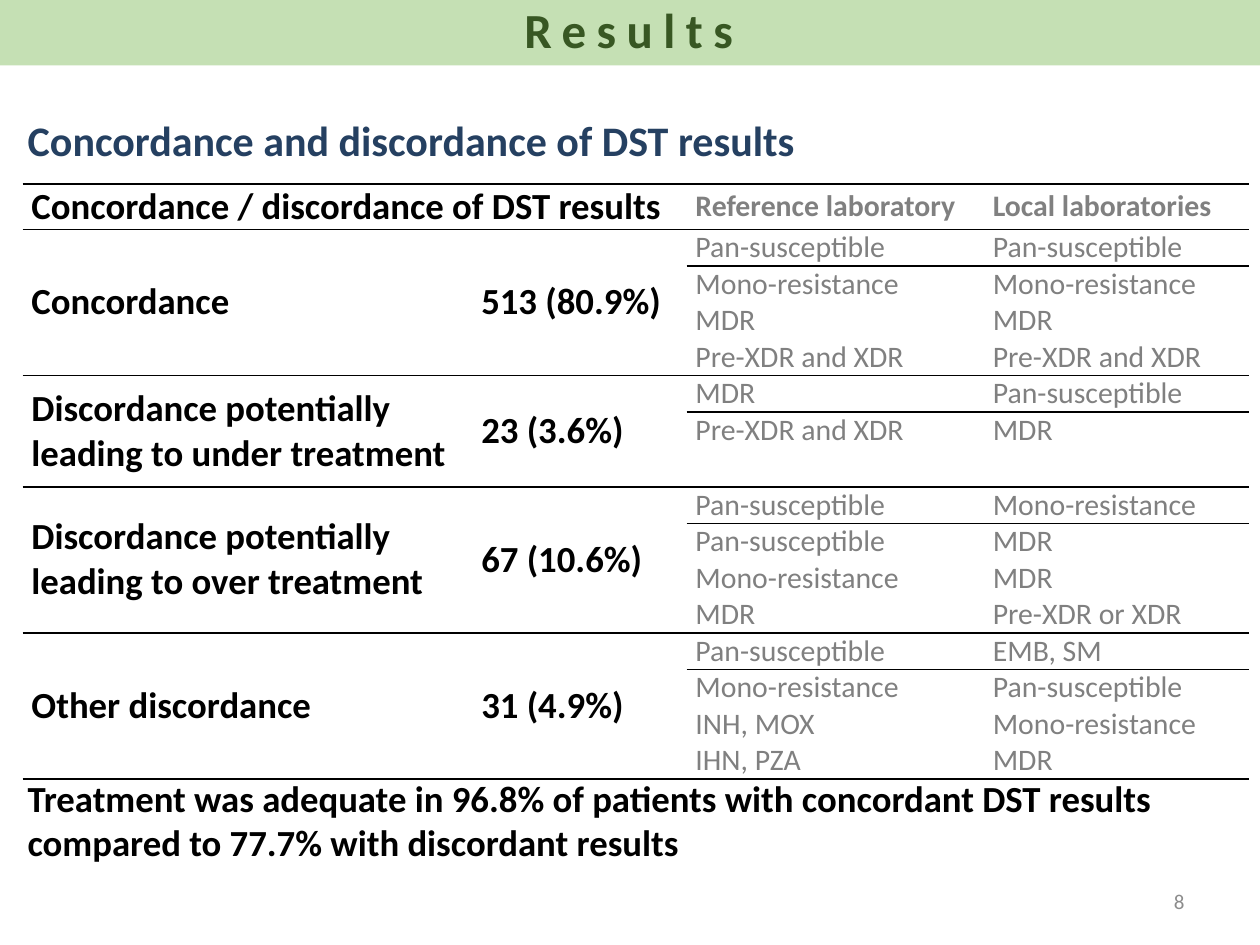
from lxml.etree import SubElement
from pptx import Presentation
from pptx.dml.color import RGBColor
from pptx.enum.shapes import MSO_SHAPE
from pptx.enum.text import MSO_ANCHOR, PP_ALIGN
from pptx.oxml.ns import qn
from pptx.util import Inches, Pt

BLACK = RGBColor(0x00, 0x00, 0x00)
GRAY = RGBColor(0x80, 0x80, 0x80)
NUMBER_GRAY = RGBColor(0x8C, 0x8C, 0x8C)
NAVY = RGBColor(0x25, 0x40, 0x61)
LIGHT_GREEN = RGBColor(0xC5, 0xE0, 0xB4)
DARK_GREEN = RGBColor(0x38, 0x57, 0x23)
FONT = "Calibri"
NO_STYLE_NO_GRID = "{2D5ABB26-0587-4C30-8999-92F81FD0307C}"

COLUMN_WIDTHS = (3.5, 1.77, 2.36, 2.1)
HEADER_HEIGHT, ROW_HEIGHT = 0.36, 0.29
HEADINGS = ("Concordance / discordance of DST results", "",
            "Reference laboratory", "Local laboratories")
OUTCOMES = [
    ("Concordance", "513 (80.9%)", [
        ("Pan-susceptible", "Pan-susceptible"),
        ("Mono-resistance", "Mono-resistance"),
        ("MDR", "MDR"),
        ("Pre-XDR and XDR", "Pre-XDR and XDR")]),
    ("Discordance potentially leading to under treatment", "23 (3.6%)", [
        ("MDR", "Pan-susceptible"),
        ("Pre-XDR and XDR", "MDR"),
        ("", "")]),
    ("Discordance potentially leading to over treatment", "67 (10.6%)", [
        ("Pan-susceptible", "Mono-resistance"),
        ("Pan-susceptible", "MDR"),
        ("Mono-resistance", "MDR"),
        ("MDR", "Pre-XDR or XDR")]),
    ("Other discordance", "31 (4.9%)", [
        ("Pan-susceptible", "EMB, SM"),
        ("Mono-resistance", "Pan-susceptible"),
        ("INH, MOX", "Mono-resistance"),
        ("IHN, PZA", "MDR")]),
]


def write(frame, text, size, color, bold=True, align=PP_ALIGN.LEFT):
    """Put one formatted paragraph into a text frame and return it."""
    frame.text = text
    paragraph = frame.paragraphs[0]
    paragraph.alignment = align
    for run in paragraph.runs:
        run.font.name = FONT
        run.font.size = Pt(size)
        run.font.bold = bold
        run.font.color.rgb = color
    return paragraph


def add_banner(slide, left, top, width, height):
    """Draw the section band with its letter-spaced name."""
    banner = slide.shapes.add_shape(MSO_SHAPE.RECTANGLE, left, top, width, height)
    banner.shadow.inherit = False
    banner.fill.solid()
    banner.fill.fore_color.rgb = LIGHT_GREEN
    banner.line.fill.background()
    section = write(banner.text_frame, "Results", 28, DARK_GREEN, align=PP_ALIGN.CENTER)
    section.line_spacing = 0.9
    section.runs[0].font._element.set("spc", "600")


def set_title(slide, left, top, width, height):
    """Place and format the slide title."""
    title = slide.shapes.title
    title.left, title.top, title.width, title.height = left, top, width, height
    title.text_frame.vertical_anchor = MSO_ANCHOR.MIDDLE
    write(title.text_frame, "Concordance and discordance of DST results", 24, NAVY)


def add_text(slide, left, top, width, height, text, size, color, **style):
    """Add a wrapping text box and return its frame."""
    frame = slide.shapes.add_textbox(left, top, width, height).text_frame
    frame.word_wrap = True
    write(frame, text, size, color, **style)
    return frame


def fill_cell(cell, text, size, color, bold=True, indent=0.07):
    """Write a transparent table cell with tight margins."""
    cell.fill.background()
    cell.vertical_anchor = MSO_ANCHOR.MIDDLE
    cell.margin_left, cell.margin_right = Inches(indent), Inches(0.07)
    cell.margin_top = cell.margin_bottom = 0
    write(cell.text_frame, text, size, color, bold)


def rule_cell(cell, *sides):
    """Draw black one-point borders on the given sides of a cell."""
    properties = cell._tc.get_or_add_tcPr()
    for position, side in enumerate(sides):
        border = SubElement(properties, qn(f"a:{side}"), w=str(Pt(1)))
        fill = SubElement(border, qn("a:solidFill"))
        SubElement(fill, qn("a:srgbClr"), val=str(BLACK))
        properties.insert(position, border)


def rule_group(table, first, last):
    """Enclose a group of rows between two horizontal rules."""
    for column in range(len(COLUMN_WIDTHS)):
        if first == last or column < 2:
            rule_cell(table.cell(first, column), "lnT", "lnB")
        else:
            rule_cell(table.cell(first, column), "lnT")
        if first != last:
            rule_cell(table.cell(last, column), "lnB")


def add_results_table(slide, left, top, width):
    """Build the table of outcomes and laboratory findings."""
    row_count = 1 + sum(len(findings) for _, _, findings in OUTCOMES)
    height = Inches(HEADER_HEIGHT + ROW_HEIGHT * (row_count - 1))
    table = slide.shapes.add_table(
        row_count, len(COLUMN_WIDTHS), left, top, width, height).table
    table.first_row = table.horz_banding = False
    table._tbl.tblPr.find(qn("a:tableStyleId")).text = NO_STYLE_NO_GRID
    for column, column_width in zip(table.columns, COLUMN_WIDTHS):
        column.width = Inches(column_width)
    for index, row in enumerate(table.rows):
        row.height = Inches(ROW_HEIGHT if index else HEADER_HEIGHT)

    for column, heading in enumerate(HEADINGS):
        size, color = (21, BLACK) if column < 2 else (17, GRAY)
        fill_cell(table.cell(0, column), heading, size, color)
    table.cell(0, 0).merge(table.cell(0, 1))
    rule_group(table, 0, 0)

    first = 1
    for outcome, patients, findings in OUTCOMES:
        last = first + len(findings) - 1
        for column, (text, indent) in enumerate(((outcome, 0.07), (patients, 0.14))):
            table.cell(first, column).merge(table.cell(last, column))
            fill_cell(table.cell(first, column), text, 21, BLACK, indent=indent)
        for row, laboratories in enumerate(findings, first):
            for column, finding in enumerate(laboratories, 2):
                fill_cell(table.cell(row, column), finding, 17, GRAY, bold=False)
        rule_group(table, first, last)
        first = last + 1


def main():
    """Assemble and save the slide."""
    deck = Presentation()
    deck.slide_width, deck.slide_height = Inches(10), Inches(7.5)
    slide = deck.slides.add_slide(deck.slide_layouts[5])
    set_title(slide, Inches(0.12), Inches(0.76), Inches(9.88), Inches(0.69))
    add_results_table(slide, Inches(0.18), Inches(1.46), Inches(9.73))
    add_banner(slide, Inches(-0.02), Inches(0), Inches(10.02), Inches(0.52))
    number = add_text(slide, Inches(7.17), Inches(6.95), Inches(2.33), Inches(0.4),
                      "8", 12, NUMBER_GRAY, bold=False, align=PP_ALIGN.RIGHT)
    number.vertical_anchor = MSO_ANCHOR.MIDDLE
    add_text(slide, Inches(0.12), Inches(6.11), Inches(9.69), Inches(0.81),
             "Treatment was adequate in 96.8% of patients with concordant DST results "
             "compared to 77.7% with discordant results", 21, BLACK)
    deck.save("out.pptx")


if __name__ == "__main__":
    main()
